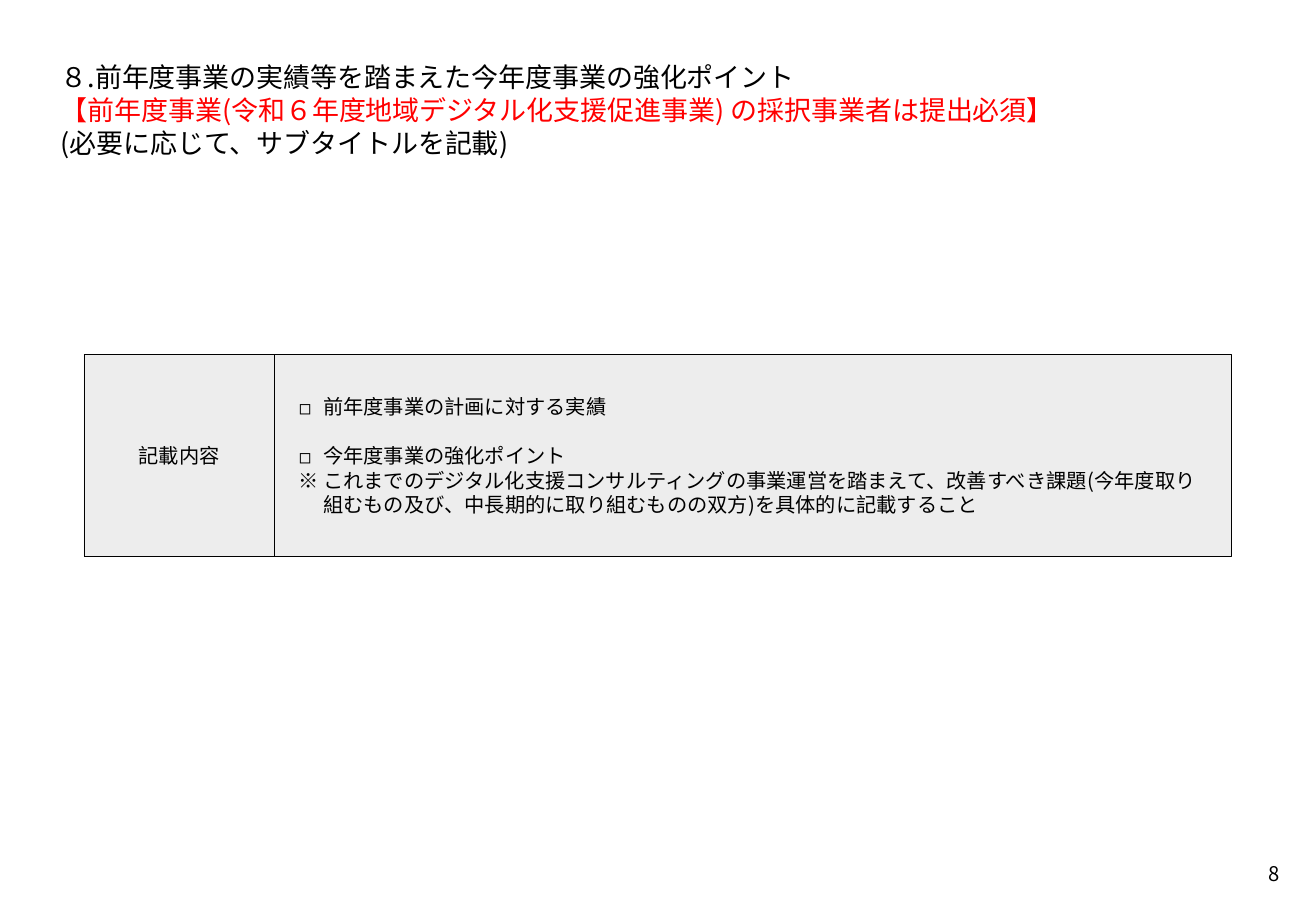
from dataclasses import dataclass

from lxml import etree
from pptx import Presentation
from pptx.dml.color import RGBColor
from pptx.enum.dml import MSO_LINE
from pptx.enum.shapes import MSO_SHAPE
from pptx.enum.text import MSO_ANCHOR, PP_ALIGN
from pptx.oxml.ns import qn
from pptx.util import Inches, Pt

RECT = MSO_SHAPE.RECTANGLE
DOT = MSO_LINE.ROUND_DOT
LEFT, MID, RIGHT = PP_ALIGN.LEFT, PP_ALIGN.CENTER, PP_ALIGN.RIGHT
TOP, HALF = MSO_ANCHOR.TOP, MSO_ANCHOR.MIDDLE


@dataclass(frozen=True)
class Theme:
    font: str = "Noto Sans CJK JP"
    black: RGBColor = RGBColor(0, 0, 0)
    red: RGBColor = RGBColor(255, 0, 0)
    gray: RGBColor = RGBColor(0xED, 0xED, 0xED)
    head: float = 16
    body: float = 12
    lead: float = 1.21
    rule: float = 0.25


THEME = Theme()


@dataclass(frozen=True)
class Line:
    text: str
    color: RGBColor = THEME.black
    mark: str = ""
    gap: float = 0


@dataclass(frozen=True)
class Panel:
    left: float
    width: float
    lines: tuple[Line, ...]
    align: PP_ALIGN
    inset: float


TITLE = (
    Line("８.前年度事業の実績等を踏まえた今年度事業の強化ポイント"),
    Line("【前年度事業(令和６年度地域デジタル化支援促進事業) の採択事業者は提出必須】", THEME.red),
    Line("(必要に応じて、サブタイトルを記載)"),
)
POINTS = (
    Line("前年度事業の計画に対する実績", mark="◻"),
    Line("今年度事業の強化ポイント", mark="◻", gap=THEME.body * THEME.lead),
    Line("これまでのデジタル化支援コンサルティングの事業運営を踏まえて、改善すべき課題"
         "(今年度取り組むもの及び、中長期的に取り組むものの双方)を具体的に記載すること", mark="※"),
)
PANELS = (
    Panel(2.26, 7.87, POINTS, LEFT, 0.2),
    Panel(0.69, 1.57, (Line("記載内容"),), MID, 0.1),
)


def add_mark(para, mark: str, indent: float = 0.2) -> None:
    """Give the paragraph a bullet with a hanging indent."""
    props = para._p.get_or_add_pPr()
    props.set("marL", str(Inches(indent)))
    props.set("indent", str(-Inches(indent)))
    etree.SubElement(props, qn("a:buFont"), typeface=THEME.font)
    etree.SubElement(props, qn("a:buChar"), char=mark)


def write(shape, lines: tuple[Line, ...], *, size: float = THEME.body, align: PP_ALIGN = LEFT,
          anchor: MSO_ANCHOR = TOP, inset: float = 0.1, wrap: bool = True) -> None:
    frame = shape.text_frame
    frame.word_wrap = wrap
    frame.vertical_anchor = anchor
    frame.margin_left = frame.margin_right = Inches(inset)
    frame.margin_top = frame.margin_bottom = Inches(inset)
    for pos, line in enumerate(lines):
        para = frame.add_paragraph() if pos else frame.paragraphs[0]
        para.alignment = align
        if line.mark:
            add_mark(para, line.mark)
        para.line_spacing = Pt(size * THEME.lead)
        if line.gap:
            para.space_before = Pt(line.gap)
        run = para.add_run()
        run.text = line.text
        run.font.size = Pt(size)
        run.font.name = THEME.font
        run.font.color.rgb = line.color
        etree.SubElement(run._r.get_or_add_rPr(), qn("a:ea"), typeface=THEME.font)


def add_panel(group, panel: Panel) -> None:
    box = group.shapes.add_shape(RECT, Inches(panel.left), Inches(2.92),
                                 Inches(panel.width), Inches(1.66))
    box.shadow.inherit = False
    box.fill.solid()
    box.fill.fore_color.rgb = THEME.gray
    box.line.color.rgb = THEME.black
    box.line.width = Pt(THEME.rule)
    box.line.dash_style = DOT
    write(box, panel.lines, align=panel.align, anchor=HALF, inset=panel.inset)


def main() -> None:
    deck = Presentation()
    deck.slide_width, deck.slide_height = Inches(10.83), Inches(7.5)
    shapes = deck.slides.add_slide(deck.slide_layouts[6]).shapes

    title = shapes.add_textbox(Inches(0.3), Inches(0.3), Inches(10.24), Inches(0.79))
    write(title, TITLE, size=THEME.head, inset=0.2)
    number = shapes.add_textbox(Inches(10.24), Inches(6.99), Inches(0.39), Inches(0.39))
    write(number, (Line("8"),), align=RIGHT, wrap=False)

    group = shapes.add_group_shape()
    for panel in PANELS:
        add_panel(group, panel)
    deck.save("out.pptx")


if __name__ == "__main__":
    main()
